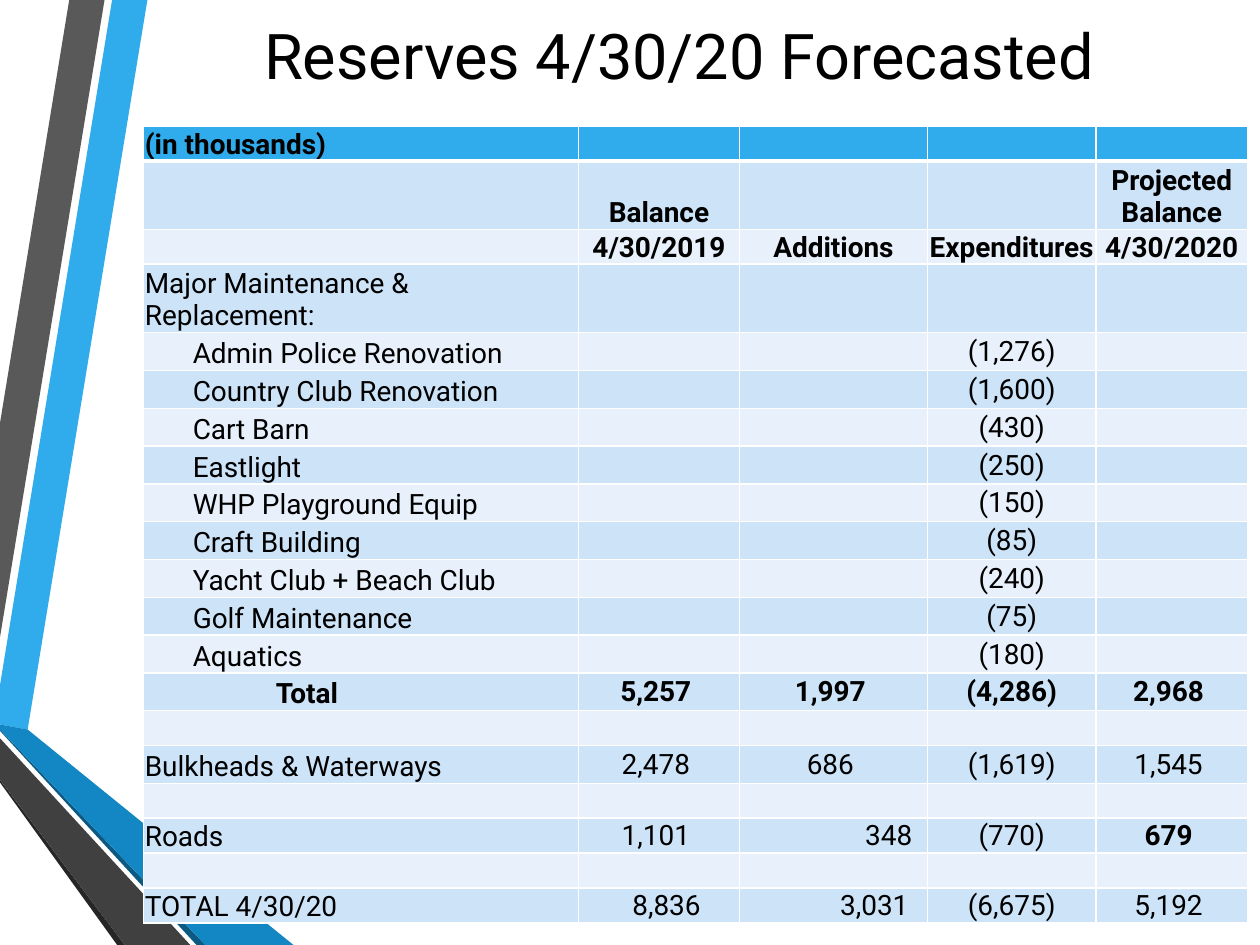
from dataclasses import dataclass

from lxml import etree
from pptx import Presentation
from pptx.dml.color import RGBColor
from pptx.enum.text import MSO_ANCHOR, PP_ALIGN
from pptx.oxml.ns import qn
from pptx.util import Inches, Pt

LEFT, CENTER, RIGHT = PP_ALIGN.LEFT, PP_ALIGN.CENTER, PP_ALIGN.RIGHT
MIDDLE, BOTTOM = MSO_ANCHOR.MIDDLE, MSO_ANCHOR.BOTTOM


@dataclass(frozen=True)
class Theme:
    font: str = "Roboto"
    title_size: int = 36
    table_size: int = 16
    text: str = "000000"
    border: str = "FFFFFF"
    header: str = "30ACEC"
    band_dark: str = "CDE3F8"
    band_light: str = "E8F1FB"


THEME = Theme()


def write(tf, text, size=THEME.table_size, bold=False, align=LEFT):
    p = tf.paragraphs[0]
    p.alignment = align
    if text:
        r = p.add_run()
        r.text = text
        font = r.font
    else:
        font = p.font
    font.name, font.size, font.bold = THEME.font, Pt(size), bold
    font.color.rgb = RGBColor.from_string(THEME.text)
    if not text:  # an empty cell takes its line height from the end mark
        end = etree.SubElement(p._p, qn("a:endParaRPr"))
        end.set("sz", str(size * 100))


def set_borders(cell, bottom_width, top_width):
    tc_pr = cell._tc.get_or_add_tcPr()
    widths = {"a:lnL": 1, "a:lnR": 1, "a:lnT": top_width, "a:lnB": bottom_width}
    for tag, width in widths.items():
        ln = etree.SubElement(tc_pr, qn(tag), w=str(Pt(width)))
        fill = etree.SubElement(ln, qn("a:solidFill"))
        etree.SubElement(fill, qn("a:srgbClr"), val=THEME.border)


prs = Presentation()
prs.slide_width, prs.slide_height = Inches(10), Inches(7.5)
s = prs.slides.add_slide(prs.slide_layouts[6])

# Ribbons along the left edge
RIBBONS = [
    ("30ACEC", [(0, 5.44), (0, 5.75), (0.22, 5.79), (1.17, 0), (0.89, 0)]),
    ("595959", [(0.83, 0), (0.55, 0), (0, 3.36), (0, 5.06)]),
    ("262626", [(0, 6.19), (0, 6.21), (0.93, 7.5), (0.99, 7.5)]),
    ("0C5A82", [(0, 5.79), (0, 5.8), (1.56, 7.5), (1.63, 7.5)]),
    ("1287C3", [(0, 5.79), (1.63, 7.5), (2.33, 7.5), (0.22, 5.79), (0, 5.75)]),
    ("404040", [(0, 6.19), (0.99, 7.5), (1.51, 7.5), (0, 5.86)]),
]
for color, points in RIBBONS:
    start, *rest = [(Inches(x), Inches(y)) for x, y in points]
    builder = s.shapes.build_freeform(*start)
    builder.add_line_segments(rest, close=True)
    sp = builder.convert_to_shape()
    sp.shadow.inherit = False
    sp.fill.solid()
    sp.fill.fore_color.rgb = RGBColor.from_string(color)
    sp.line.fill.background()

# Title
title = s.shapes.add_textbox(Inches(1.49), Inches(0.11), Inches(7.8), Inches(0.64))
tf = title.text_frame
tf.word_wrap = True
tf.vertical_anchor = MIDDLE
write(tf, "Reserves 4/30/20 Forecasted", size=THEME.title_size, align=CENTER)

# Reserves table
PROJECTS = [
    ("Admin Police Renovation", "(1,276)"),
    ("Country Club Renovation", "(1,600)"),
    ("Cart Barn", "(430)"),
    ("Eastlight", "(250)"),
    ("WHP Playground Equip", "(150)"),
    ("Craft Building", "(85)"),
    ("Yacht Club + Beach Club", "(240)"),
    ("Golf Maintenance", "(75)"),
    ("Aquatics", "(180)"),
]
BLANK = [""] * 5
ROWS = [
    ["(in thousands)", "", "", "", ""],
    ["", "Balance", "", "", "Projected Balance"],
    ["", "4/30/2019", "Additions", "Expenditures", "4/30/2020"],
    ["Major Maintenance & Replacement:", "", "", "", ""],
    *[[name, "", "", spent, ""] for name, spent in PROJECTS],
    ["Total", "5,257", "1,997", "(4,286)", "2,968"],
    BLANK,
    ["Bulkheads & Waterways", "2,478", "686", "(1,619)", "1,545"],
    BLANK,
    ["Roads", "1,101", "348", "(770)", "679"],
    BLANK,
    ["TOTAL 4/30/20", "8,836", "3,031", "(6,675)", "5,192"],
]
HEADING_ROWS = 3
FIRST_PROJECT = 4
TOTAL_ROW = FIRST_PROJECT + len(PROJECTS)
ROADS_ROW, LAST_ROW = len(ROWS) - 3, len(ROWS) - 1
COL_WIDTHS = [3.45, 1.28, 1.49, 1.34, 1.2]
ROW_HEIGHTS = [0.27, 0.52, 0.27, 0.53] + [0.3] * 10 + [0.27, 0.3] + [0.27] * 4
LEFT_INSETS = {(r, 0): 0.39 for r in range(FIRST_PROJECT, TOTAL_ROW)}
LEFT_INSETS |= {(TOTAL_ROW, 0): 1.05, (LAST_ROW, 1): 0.18}
RIGHT_ALIGNED = {(ROADS_ROW, 2): 0.12, (LAST_ROW, 2): 0.15}

table = s.shapes.add_table(
    len(ROWS), len(COL_WIDTHS), Inches(1.14), Inches(1),
    Inches(sum(COL_WIDTHS)), Inches(sum(ROW_HEIGHTS)),
).table
table.first_row = table.horz_banding = False
for column, width in zip(table.columns, COL_WIDTHS):
    column.width = Inches(width)
for row, height in zip(table.rows, ROW_HEIGHTS):
    row.height = Inches(height)

for i, values in enumerate(ROWS):
    band = THEME.band_dark if i % 2 else THEME.band_light
    for j, text in enumerate(values):
        cell = table.cell(i, j)
        set_borders(cell, 3 if i == 0 else 1, 3 if i == 1 else 1)
        cell.fill.solid()
        cell.fill.fore_color.rgb = RGBColor.from_string(band if i else THEME.header)
        is_figure = i >= HEADING_ROWS and j > 0
        # Positive figures leave room for the closing bracket of negative ones
        right = 0.06 if is_figure and not text.endswith(")") else 0.01
        cell.margin_left = Inches(LEFT_INSETS.get((i, j), 0.01))
        cell.margin_right = Inches(RIGHT_ALIGNED.get((i, j), right))
        cell.margin_top, cell.margin_bottom = Inches(0.01), Inches(0)
        cell.vertical_anchor = MIDDLE if is_figure else BOTTOM
        align = RIGHT if (i, j) in RIGHT_ALIGNED else CENTER if j else LEFT
        bold = i < HEADING_ROWS or i == TOTAL_ROW or (i, j) == (ROADS_ROW, 4)
        write(cell.text_frame, text, bold=bold, align=align)

prs.save("out.pptx")
